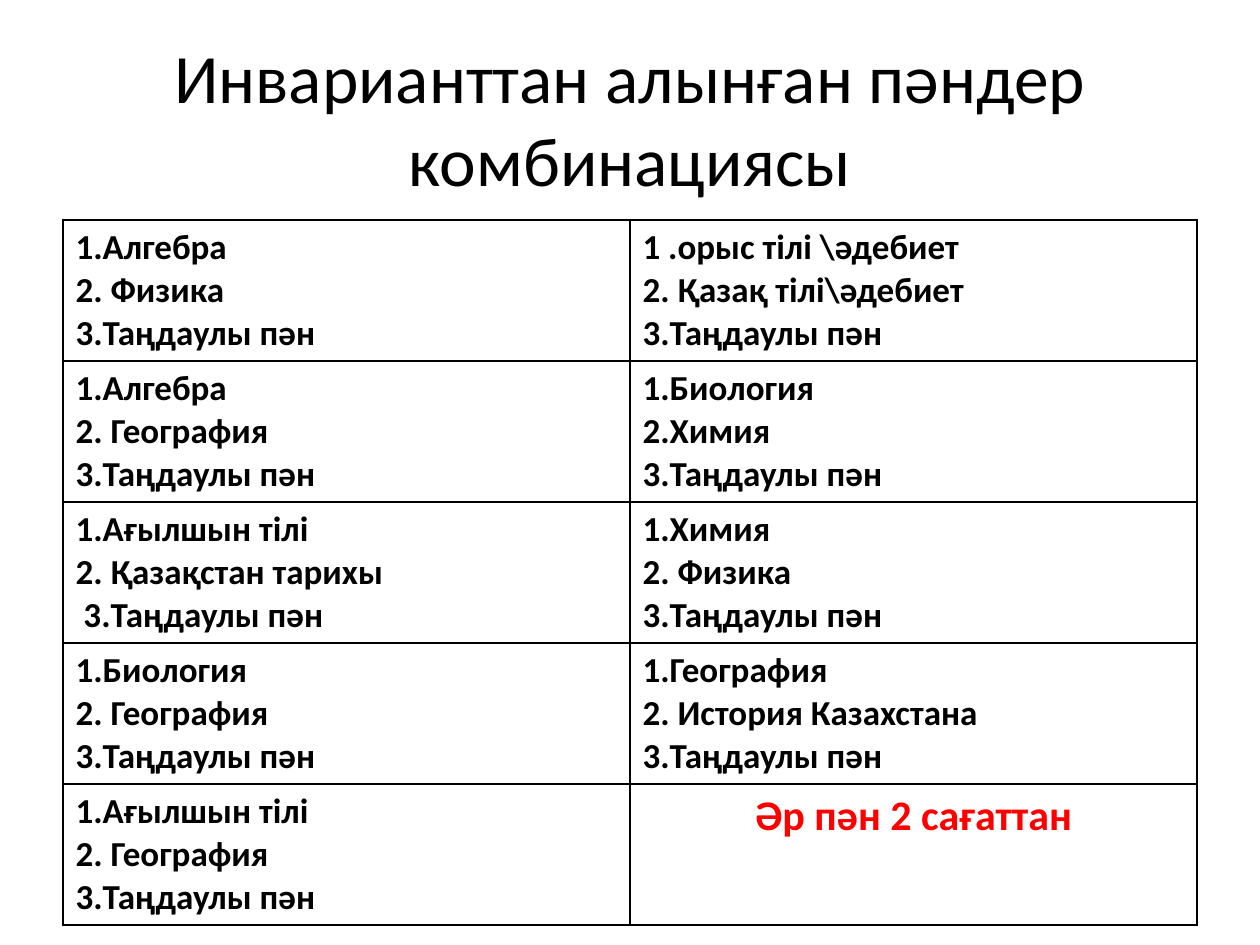
from lxml.etree import SubElement
from pptx import Presentation
from pptx.dml.color import RGBColor as RGB
from pptx.enum.text import MSO_ANCHOR as ANCHOR, PP_ALIGN as ALIGN
from pptx.oxml.ns import qn
from pptx.util import Pt

COLORS = {"text": "000000", "accent": "FF0000", "border": "000000", "cell": "FFFFFF"}
FONT = "Calibri"
CHOICE = "3.Таңдаулы пән"
NOTE = "Әр пән 2 сағаттан"
ROWS = [
    (["1.Алгебра", "2. Физика", CHOICE],
     ["1 .орыс тілі \\әдебиет", "2. Қазақ тілі\\әдебиет", CHOICE]),
    (["1.Алгебра", "2. География", CHOICE],
     ["1.Биология", "2.Химия", CHOICE]),
    (["1.Ағылшын тілі", "2. Қазақстан тарихы", " " + CHOICE],
     ["1.Химия", "2. Физика", CHOICE]),
    (["1.Биология", "2. География", CHOICE],
     ["1.География", "2. История Казахстана", CHOICE]),
    (["1.Ағылшын тілі", "2. География", CHOICE], [NOTE]),
]


def px(n):
    return round(n * 914400 / 126)


def style_text(tf, size, color, bold=False, align=ALIGN.LEFT):
    for p in tf.paragraphs:
        p.alignment = align
        for r in p.runs:
            r.font.name = FONT
            r.font.size = Pt(size)
            r.font.bold = bold
            r.font.color.rgb = RGB.from_string(COLORS[color])


def add_borders(cell):
    tc_pr = cell._tc.get_or_add_tcPr()
    for i, side in enumerate(("lnL", "lnR", "lnT", "lnB")):
        ln = tc_pr.makeelement(qn(f"a:{side}"), {"w": str(Pt(1))})
        fill = SubElement(ln, qn("a:solidFill"))
        SubElement(fill, qn("a:srgbClr"), val=COLORS["border"])
        tc_pr.insert(i, ln)


def add_title(s, x, y, w, h):
    tf = s.shapes.add_textbox(px(x), px(y), px(w), px(h)).text_frame
    tf.word_wrap = True
    tf.vertical_anchor = ANCHOR.MIDDLE
    tf.text = "Инварианттан алынған пәндер комбинациясы"
    style_text(tf, 39.6, "text", align=ALIGN.CENTER)


def add_subjects(s, x, y, w, h):
    table = s.shapes.add_table(len(ROWS), 2, px(x), px(y), px(w), px(h)).table
    table.first_row = False
    table.horz_banding = False
    for i, row in enumerate(ROWS):
        for j, lines in enumerate(row):
            cell = table.cell(i, j)
            cell.fill.solid()
            cell.fill.fore_color.rgb = RGB.from_string(COLORS["cell"])
            add_borders(cell)
            tf = cell.text_frame
            tf.text = "\n".join(lines)
            if lines == [NOTE]:
                style_text(tf, 24, "accent", True, ALIGN.CENTER)
            else:
                style_text(tf, 20, "text", True)


def main():
    prs = Presentation()
    prs.slide_width, prs.slide_height = px(1260), px(945)
    s = prs.slides.add_slide(prs.slide_layouts[6])
    add_title(s, 63, 38, 1134, 158)
    add_subjects(s, 63, 220, 1134, 705)
    prs.save("out.pptx")


if __name__ == "__main__":
    main()
